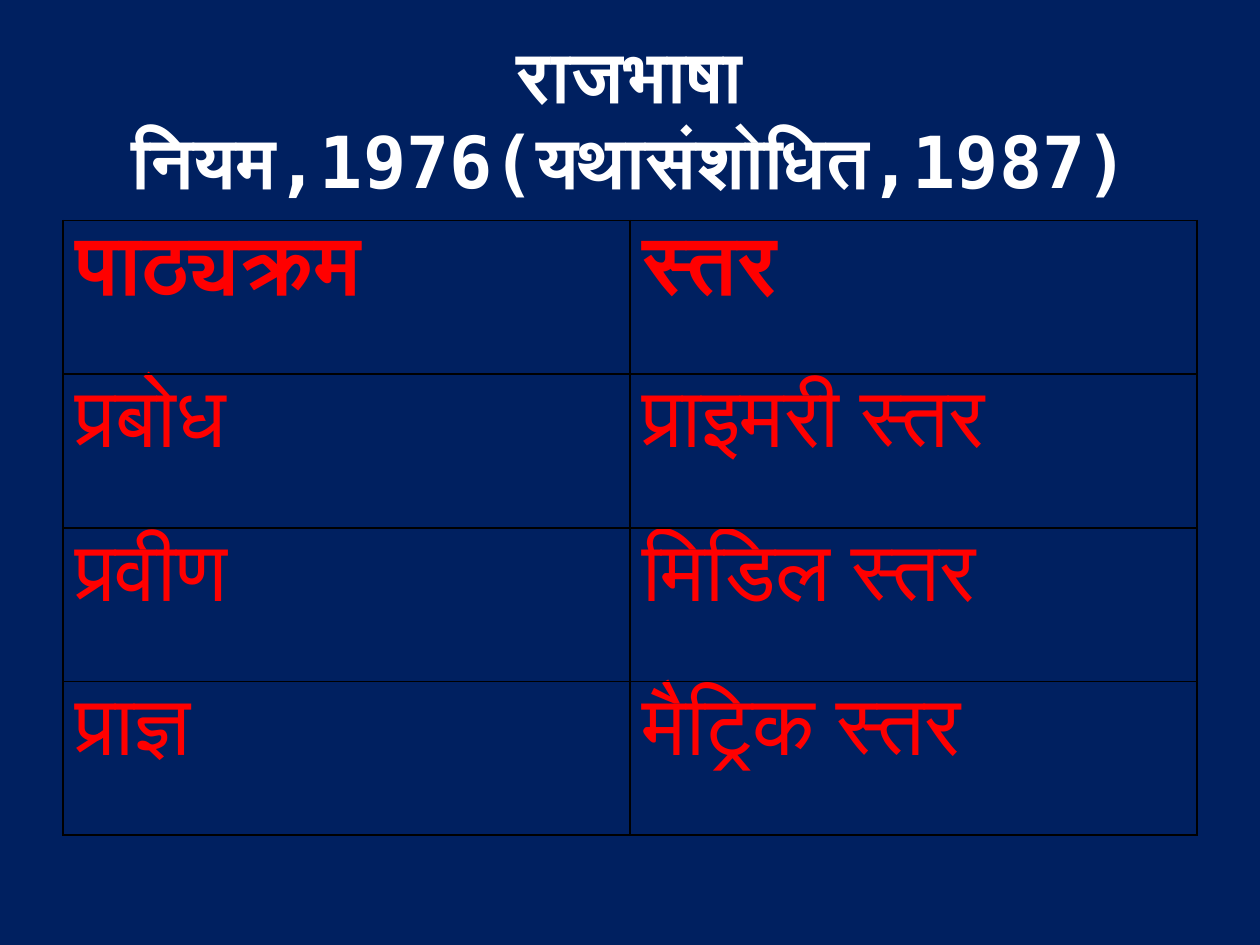
from lxml import etree
from pptx import Presentation
from pptx import util as u
from pptx.dml.color import RGBColor
from pptx.enum import text
from pptx.oxml import ns

PX = 9144  # EMU per px, 100 px to the inch
NAVY = RGBColor(0x00, 0x20, 0x60)
WHITE = RGBColor(0xFF, 0xFF, 0xFF)
RED = RGBColor(0xFF, 0x00, 0x00)
BLACK = RGBColor(0x00, 0x00, 0x00)
FONT = "DejaVu Sans Mono"

TITLE = "राजभाषा नियम,1976(यथासंशोधित,1987)"
COURSES = [
    ("पाठ्यक्रम", "स्तर"),
    ("प्रबोध", "प्राइमरी स्तर"),
    ("प्रवीण", "मिडिल स्तर"),
    ("प्राज्ञ", "मैट्रिक स्तर"),
]


def px(*lengths):
    return [u.Emu(length * PX) for length in lengths]


def format_text(frame, size, color, bold, align):
    for para in frame.paragraphs:
        para.alignment = align
        for span in para.runs:
            font = span.font
            font.name, font.size, font.bold = FONT, u.Pt(size), bold
            font.color.rgb = color


def add_borders(cell):
    props = cell._tc.get_or_add_tcPr()
    for position, side in enumerate(("lnL", "lnR", "lnT", "lnB")):
        line = etree.Element(ns.qn(f"a:{side}"), w=str(u.Pt(1)))
        fill = etree.SubElement(line, ns.qn("a:solidFill"))
        etree.SubElement(fill, ns.qn("a:srgbClr"), val=str(BLACK))
        props.insert(position, line)


def place_title(page, box):
    title = page.shapes.title
    title.left, title.top, title.width, title.height = px(*box)
    frame = title.text_frame
    frame.text = TITLE
    frame.word_wrap = True
    frame.auto_size = text.MSO_AUTO_SIZE.NONE
    frame.vertical_anchor = text.MSO_ANCHOR.MIDDLE
    format_text(frame, 41, WHITE, True, text.PP_ALIGN.CENTER)


def place_course_table(page, box):
    table = page.shapes.add_table(len(COURSES), len(COURSES[0]), *px(*box)).table
    table.horz_banding = False
    for row, course in enumerate(COURSES):
        for column, label in enumerate(course):
            cell = table.cell(row, column)
            cell.text = label
            cell.fill.background()
            add_borders(cell)
            format_text(cell.text_frame, 48, RED, row == 0, text.PP_ALIGN.LEFT)


def main():
    deck = Presentation()
    deck.slide_width, deck.slide_height = px(1000, 750)
    page = deck.slides.add_slide(deck.slide_layouts[5])

    # Background
    page.background.fill.solid()
    page.background.fill.fore_color.rgb = NAVY

    # Title above the course levels
    place_title(page, (50, 30, 900, 125))
    place_course_table(page, (50, 175, 900, 488))
    deck.save("out.pptx")


if __name__ == "__main__":
    main()
